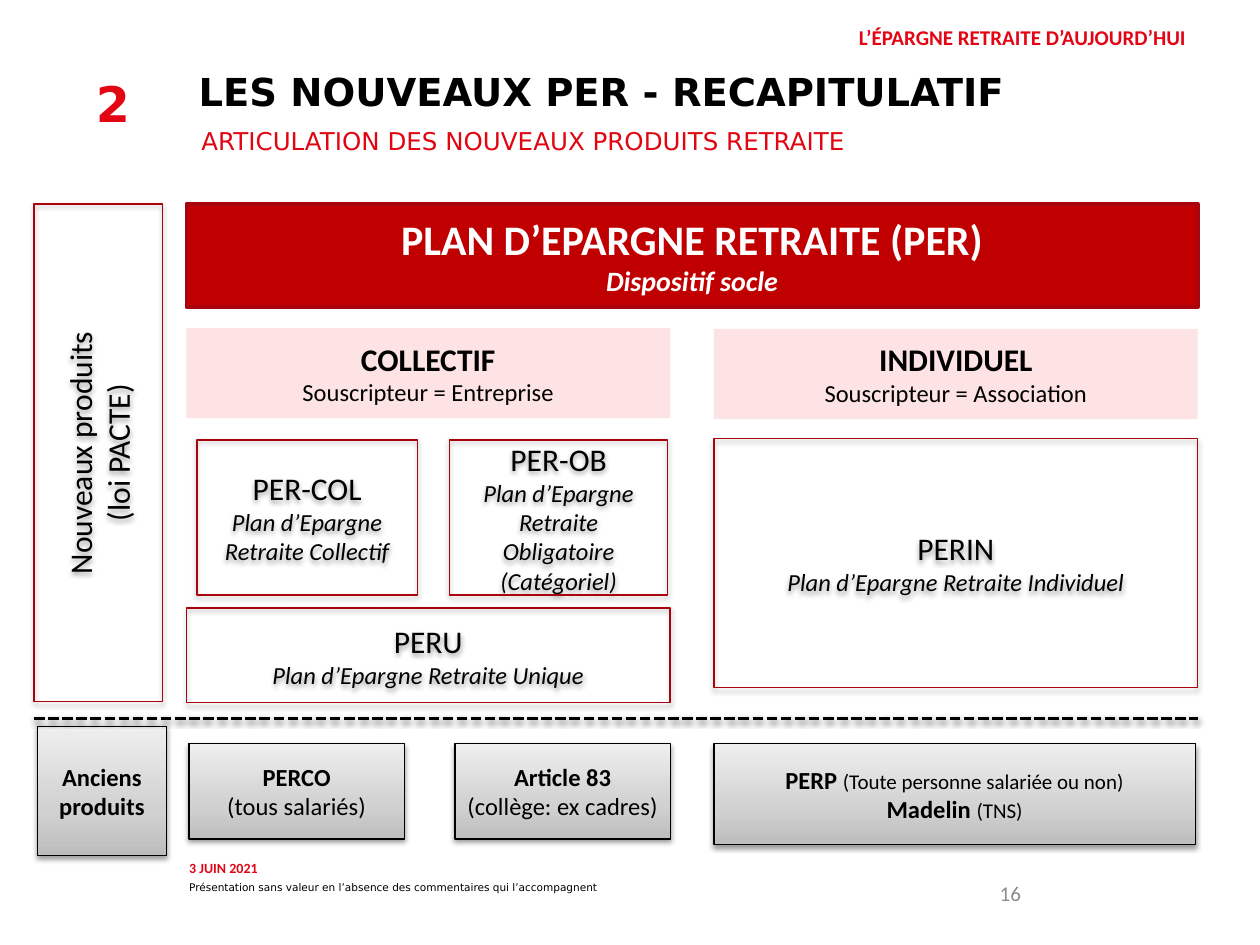
from copy import deepcopy

from lxml import etree
from pptx import Presentation
from pptx.dml.color import RGBColor
from pptx.enum.dml import MSO_LINE
from pptx.enum.shapes import MSO_CONNECTOR, MSO_SHAPE
from pptx.enum.text import MSO_ANCHOR, MSO_AUTO_SIZE, PP_ALIGN
from pptx.oxml.ns import qn
from pptx.util import Pt

RECTANGLE = MSO_SHAPE.RECTANGLE
STRAIGHT = MSO_CONNECTOR.STRAIGHT
DASH = MSO_LINE.SQUARE_DOT
TOP, MIDDLE = MSO_ANCHOR.TOP, MSO_ANCHOR.MIDDLE
LEFT, CENTER, RIGHT = PP_ALIGN.LEFT, PP_ALIGN.CENTER, PP_ALIGN.RIGHT
NO_AUTOFIT = MSO_AUTO_SIZE.NONE
BRIGHT_RED, DARK_RED = "E30513", "A9040D"
GREYS = [(0, "BDBDBD"), (0.35, "D1D1D1"), (1, "EEEEEE")]


def write(shape, lines, color, align=CENTER, anchor=MIDDLE, font_name="Calibri"):
    """Fill a shape with lines, each a list of (text, size, style) runs; style holds b and/or i."""
    frame = shape.text_frame
    frame.auto_size = NO_AUTOFIT
    frame.word_wrap = True
    frame.vertical_anchor = anchor
    for index, runs in enumerate(lines):
        paragraph = frame.add_paragraph() if index else frame.paragraphs[0]
        paragraph.alignment = align
        paragraph.space_before = Pt(0)
        if shape.is_placeholder:
            properties = paragraph._p.get_or_add_pPr()
            properties.set("marL", "0")
            properties.set("indent", "0")
            etree.SubElement(properties, qn("a:buNone"))
        for text, size, style in runs:
            run = paragraph.add_run()
            run.text = text
            font = paragraph.font if len(runs) == 1 else run.font
            font.name = font_name
            font.size = Pt(size)
            font.bold = "b" in style
            font.italic = "i" in style
            font.color.rgb = RGBColor.from_string(color)


def set_effects(shape, shadow):
    """Replace the theme effects by a soft shadow below the shape, or by none."""
    effects = etree.SubElement(shape._element.spPr, qn("a:effectLst"))
    if shadow:
        outer = etree.SubElement(effects, qn("a:outerShdw"), blurRad=str(Pt(3.1)),
                                 dist=str(Pt(1.6)), dir="5400000", rotWithShape="0")
        black = etree.SubElement(outer, qn("a:srgbClr"), val="000000")
        etree.SubElement(black, qn("a:alpha"), val="38000")


presentation = Presentation()
presentation.slide_width, presentation.slide_height = Pt(720), Pt(540)
slide = presentation.slides.add_slide(presentation.slide_layouts[1])

# Title, header, subtitle and footer texts
section_number = slide.shapes.title
header = slide.placeholders[1]
heading, subtitle, notice, date, page = [
    slide.shapes.add_textbox(0, 0, 0, 0) for _ in range(5)]
texts = [
    (section_number, (36.5, 33, 56, 52), "2", 28, "b", BRIGHT_RED, CENTER, MIDDLE, "DejaVu Sans"),
    (header, (399, 6.5, 286, 29), "L’ÉPARGNE RETRAITE D’AUJOURD’HUI", 12, "b",
     BRIGHT_RED, RIGHT, MIDDLE, "Calibri"),
    (heading, (106.5, 39, 551, 26), "LES NOUVEAUX PER - RECAPITULATIF", 22, "b",
     "000000", LEFT, MIDDLE, "DejaVu Sans"),
    (subtitle, (108, 68.5, 551, 25), "ARTICULATION DES NOUVEAUX PRODUITS RETRAITE", 14, "",
     "E10511", LEFT, TOP, "DejaVu Sans"),
    (notice, (101, 500, 254, 14.5),
     "Présentation sans valeur en l’absence des commentaires qui l’accompagnent", 6, "",
     "000000", LEFT, TOP, "DejaVu Sans"),
    (date, (101, 481.5, 253, 29), "3 JUIN 2021", 8, "b", BRIGHT_RED, LEFT, MIDDLE, "Calibri"),
    (page, (422.5, 496, 168, 29), "16", 12, "", "8C8C8C", RIGHT, MIDDLE, "Calibri"),
]
for shape, box, text, size, style, color, align, anchor, font_name in texts:
    shape.left, shape.top, shape.width, shape.height = map(Pt, box)
    write(shape, [[(text, size, style)]], color, align, anchor, font_name)

# Product boxes: kind, position, lines of runs
boxes = [
    ("base", (106.5, 116.5, 578, 59),
     [[("PLAN D’EPARGNE RETRAITE (PER)", 24, "b")], [("Dispositif socle", 16, "bi")]]),
    ("family", (106.5, 187.5, 276.5, 51.5),
     [[("COLLECTIF", 18, "b")], [("Souscripteur = Entreprise", 14, "")]]),
    ("family", (408, 188, 276.5, 51.5),
     [[("INDIVIDUEL", 18, "b")], [("Souscripteur = Association", 14, "")]]),
    ("new", (112.5, 251.5, 126, 88.5),
     [[("PER-COL", 18, "")], [("Plan d’Epargne Retraite Collectif", 14, "i")]]),
    ("new", (257, 251.5, 124.5, 88.5),
     [[("PER-OB", 18, "")], [("Plan d’Epargne Retraite Obligatoire (Catégoriel)", 14, "i")]]),
    ("new", (408, 250.5, 276.5, 142.5),
     [[("PERIN", 18, "")], [("Plan d’Epargne Retraite Individuel", 14, "i")]]),
    ("new", (106.5, 347.5, 276.5, 54),
     [[("PERU", 18, "")], [("Plan d’Epargne Retraite Unique", 14, "i")]]),
    ("side", (19.5, 116.5, 73.5, 284.5),
     [[("Nouveaux produits", 18, "")], [("(loi PACTE)", 18, "")]]),
    ("old", (21.5, 415, 73.5, 74), [[("Anciens produits", 14, "b")]]),
    ("old", (108, 425, 123, 54.5), [[("PERCO", 14, "b")], [("(tous salariés)", 14, "")]]),
    ("old", (260, 425, 123, 54.5),
     [[("Article 83", 14, "b")], [("(collège: ex cadres)", 14, "")]]),
    ("old", (408, 425, 275, 57.5),
     [[("PERP ", 14, "b"), ("(Toute personne salariée ou non)", 12, "")],
      [("Madelin ", 14, "b"), ("(TNS)", 12, "")]]),
]
solid_fills = {"base": "C00000", "family": "FEC8CB"}
outlines = {"base": (DARK_RED, 2), "new": (DARK_RED, 0.75), "side": (DARK_RED, 0.75),
            "old": ("000000", 0.75)}
for kind, box, lines in boxes:
    shape = slide.shapes.add_shape(RECTANGLE, *map(Pt, box))
    if kind in solid_fills:
        shape.fill.solid()
        shape.fill.fore_color.rgb = RGBColor.from_string(solid_fills[kind])
    elif kind == "old":
        shape.fill.gradient()
        shape.fill.gradient_angle = 90
        stop_list = shape._element.spPr.find(".//" + qn("a:gsLst"))
        stop_list.insert(1, deepcopy(stop_list[0]))
        for stop, (position, grey) in zip(shape.fill.gradient_stops, GREYS):
            stop.position = position
            stop.color.rgb = RGBColor.from_string(grey)
    else:
        shape.fill.background()
    if kind == "family":
        fill_color = shape._element.spPr.find(".//" + qn("a:srgbClr"))
        etree.SubElement(fill_color, qn("a:alpha"), val="50000")
    if kind in outlines:
        line_color, line_width = outlines[kind]
        shape.line.color.rgb = RGBColor.from_string(line_color)
        shape.line.width = Pt(line_width)
    else:
        shape.line.fill.background()
    set_effects(shape, kind in ("new", "side", "old"))
    write(shape, lines, "FFFFFF" if kind == "base" else "000000")
    if kind == "side":
        shape.text_frame._txBody.bodyPr.set("vert", "vert270")

# Divider between new and old products
divider = slide.shapes.add_connector(STRAIGHT, Pt(19.5), Pt(410.5), Pt(684.5), Pt(410.5))
divider.line.color.rgb = RGBColor.from_string("000000")
divider.line.width = Pt(2)
divider.line.dash_style = DASH
set_effects(divider, True)

presentation.save("out.pptx")
